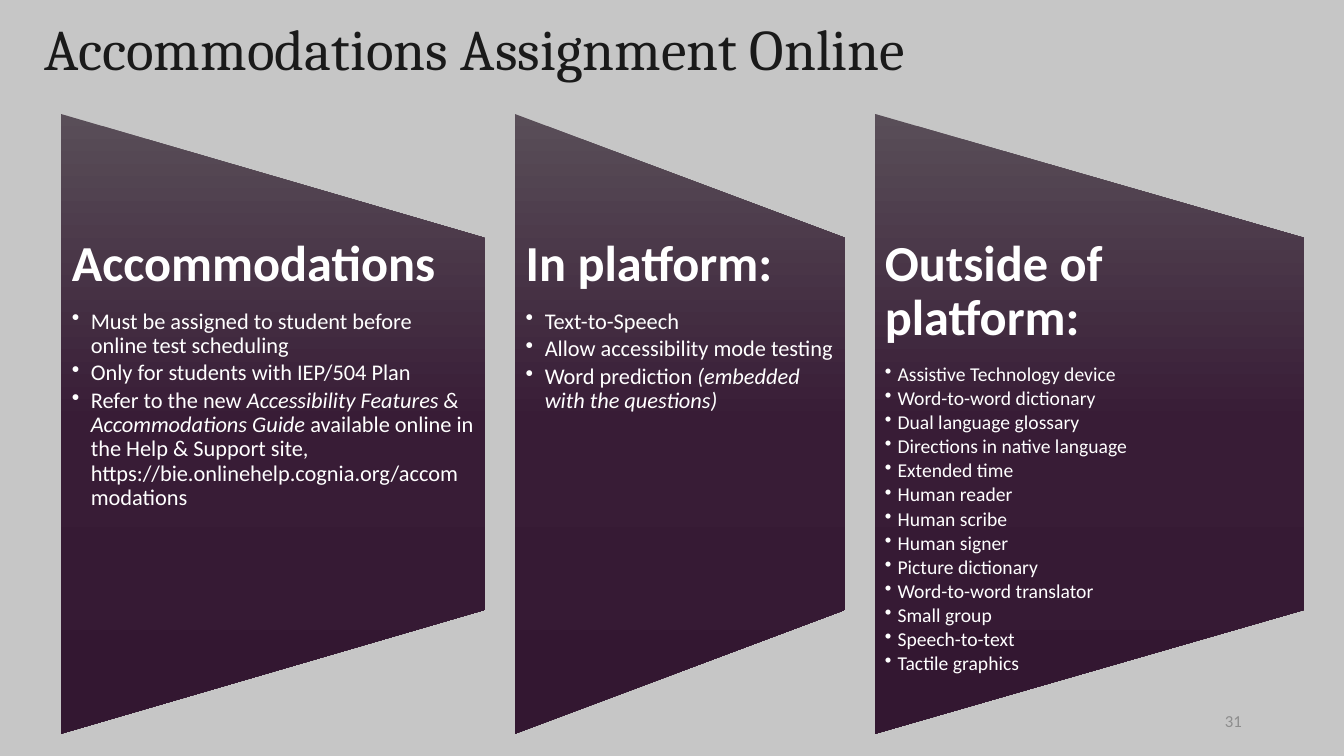
from dataclasses import dataclass

from lxml import etree
from copy import deepcopy
from pptx import Presentation
from pptx import slide as slides
from pptx import util as u
from pptx.dml import color
from pptx.enum import shapes, text
from pptx.oxml import ns
from pptx.text import text as texts

COLORS = {
    "background": "C6C6C6",
    "title": "1A1A1A",
    "panel_top": "594E58",
    "panel_middle": "381C36",
    "panel_bottom": "331731",
    "panel_text": "FFFFFF",
    "number": "8D8D8D",
}
PANEL_STOPS = [(0, "panel_top"), (0.5, "panel_middle"), (1, "panel_bottom")]
PANEL_LEFT, PANEL_TOP, PANEL_HEIGHT, PANEL_GAP = 1.53, 2.87, 15.62, 0.75
HEADING_SIZE = 36


@dataclass
class Run:
    text: str
    italic: bool = False


@dataclass
class Panel:
    heading: str
    width: float
    size: int
    indent: float
    inset: float
    bullets: list[list[Run]]


PANELS = [
    Panel("Accommodations", 10.69, 16, 0.48, 0.28, [
        [Run("Must be assigned to student before online test scheduling")],
        [Run("Only for students with IEP/504 Plan")],
        [
            Run("Refer to the new "),
            Run("Accessibility Features & Accommodations Guide ", True),
            Run("available online in the Help & Support site, "
                "https://bie.onlinehelp.cognia.org/accommodations"),
        ],
    ]),
    Panel("In platform:", 8.33, 16, 0.48, 0.28, [
        [Run("Text-to-Speech")],
        [Run("Allow accessibility mode testing")],
        [Run("Word prediction "), Run("(embedded with the questions)", True)],
    ]),
    Panel("Outside of platform:", 10.82, 14, 0.32, 0.25, [
        [Run(item)] for item in (
            "Assistive Technology device",
            "Word-to-word dictionary",
            "Dual language glossary",
            "Directions in native language",
            "Extended time",
            "Human reader",
            "Human scribe",
            "Human signer",
            "Picture dictionary",
            "Word-to-word translator",
            "Small group",
            "Speech-to-text",
            "Tactile graphics",
        )
    ]),
]


def rgb(name: str) -> color.RGBColor:
    return color.RGBColor.from_string(COLORS[name])


def set_font(paragraph: texts._Paragraph, name: str, size: float,
             color_name: str, bold: bool = False) -> None:
    font = paragraph.font
    font.name, font.size, font.bold = name, u.Pt(size), bold
    font.color.rgb = rgb(color_name)


def add_bullet(paragraph: texts._Paragraph, indent: float) -> None:
    properties = paragraph._p.get_or_add_pPr()
    properties.set("marL", str(u.Cm(indent)))
    properties.set("indent", str(-u.Cm(indent)))
    etree.SubElement(properties, ns.qn("a:buChar"), char="•")


def add_title(slide: slides.Slide, wording: str) -> None:
    title = slide.shapes.title
    title.left, title.top = u.Cm(0.86), u.Cm(-0.53)
    title.width, title.height = u.Cm(30.23), u.Cm(3.68)
    frame = title.text_frame
    frame.text = wording
    frame.auto_size = text.MSO_AUTO_SIZE.NONE
    frame.vertical_anchor = text.MSO_ANCHOR.MIDDLE
    paragraph = frame.paragraphs[0]
    paragraph.alignment = text.PP_ALIGN.LEFT
    paragraph.line_spacing = 0.9
    set_font(paragraph, "Cambria", 41, "title")


def add_panel_shape(slide: slides.Slide, panel: Panel, left: float) -> None:
    offset = (PANEL_HEIGHT - panel.width) / 2
    shape = slide.shapes.add_shape(
        shapes.MSO_SHAPE.FLOWCHART_MANUAL_OPERATION,
        u.Cm(left - offset), u.Cm(PANEL_TOP + offset),
        u.Cm(PANEL_HEIGHT), u.Cm(panel.width))
    shape.rotation = 270
    shape.shadow.inherit = False
    shape.line.fill.background()
    shape.fill.gradient()
    shape.fill.gradient_angle = 270
    gradient = shape._element.spPr.find(ns.qn("a:gradFill"))
    gradient.set("rotWithShape", "0")
    stop_list = gradient.find(ns.qn("a:gsLst"))
    stop_list.append(deepcopy(stop_list[0]))
    for stop, (position, color_name) in zip(shape.fill.gradient_stops, PANEL_STOPS):
        stop.position = position
        stop.color.rgb = rgb(color_name)


def add_panel_text(slide: slides.Slide, panel: Panel, left: float) -> None:
    box = slide.shapes.add_textbox(
        u.Cm(left), u.Cm(PANEL_TOP + 0.2 * PANEL_HEIGHT),
        u.Cm(panel.width), u.Cm(0.6 * PANEL_HEIGHT))
    frame = box.text_frame
    frame.word_wrap = True
    frame.margin_left = frame.margin_right = u.Cm(panel.inset)
    frame.margin_top = frame.margin_bottom = 0
    heading = frame.paragraphs[0]
    heading.text = panel.heading
    heading.line_spacing = 0.9
    heading.space_after = u.Pt(0.35 * HEADING_SIZE)
    set_font(heading, "Calibri", HEADING_SIZE, "panel_text", bold=True)
    for runs in panel.bullets:
        paragraph = frame.add_paragraph()
        paragraph.level = 1
        paragraph.line_spacing = 0.9
        paragraph.space_after = u.Pt(0.15 * panel.size)
        add_bullet(paragraph, panel.indent)
        set_font(paragraph, "Calibri", panel.size, "panel_text")
        for part in runs:
            run = paragraph.add_run()
            run.text = part.text
            if part.italic:
                run.font.italic = True


def add_slide_number(slide: slides.Slide, number: str) -> None:
    box = slide.shapes.add_textbox(u.Cm(23.93), u.Cm(17.65), u.Cm(7.62), u.Cm(1.02))
    frame = box.text_frame
    frame.word_wrap = True
    frame.vertical_anchor = text.MSO_ANCHOR.MIDDLE
    paragraph = frame.paragraphs[0]
    paragraph.text = number
    paragraph.alignment = text.PP_ALIGN.RIGHT
    set_font(paragraph, "Calibri", 12, "number")


def main() -> None:
    presentation = Presentation()
    presentation.slide_width, presentation.slide_height = u.Cm(33.87), u.Cm(19.05)
    slide = presentation.slides.add_slide(presentation.slide_layouts[5])
    slide.background.fill.solid()
    slide.background.fill.fore_color.rgb = rgb("background")
    add_title(slide, "Accommodations Assignment Online")
    left = PANEL_LEFT
    for panel in PANELS:
        add_panel_shape(slide, panel, left)
        add_panel_text(slide, panel, left)
        left += panel.width + PANEL_GAP
    add_slide_number(slide, "31")
    presentation.save("out.pptx")


if __name__ == "__main__":
    main()
